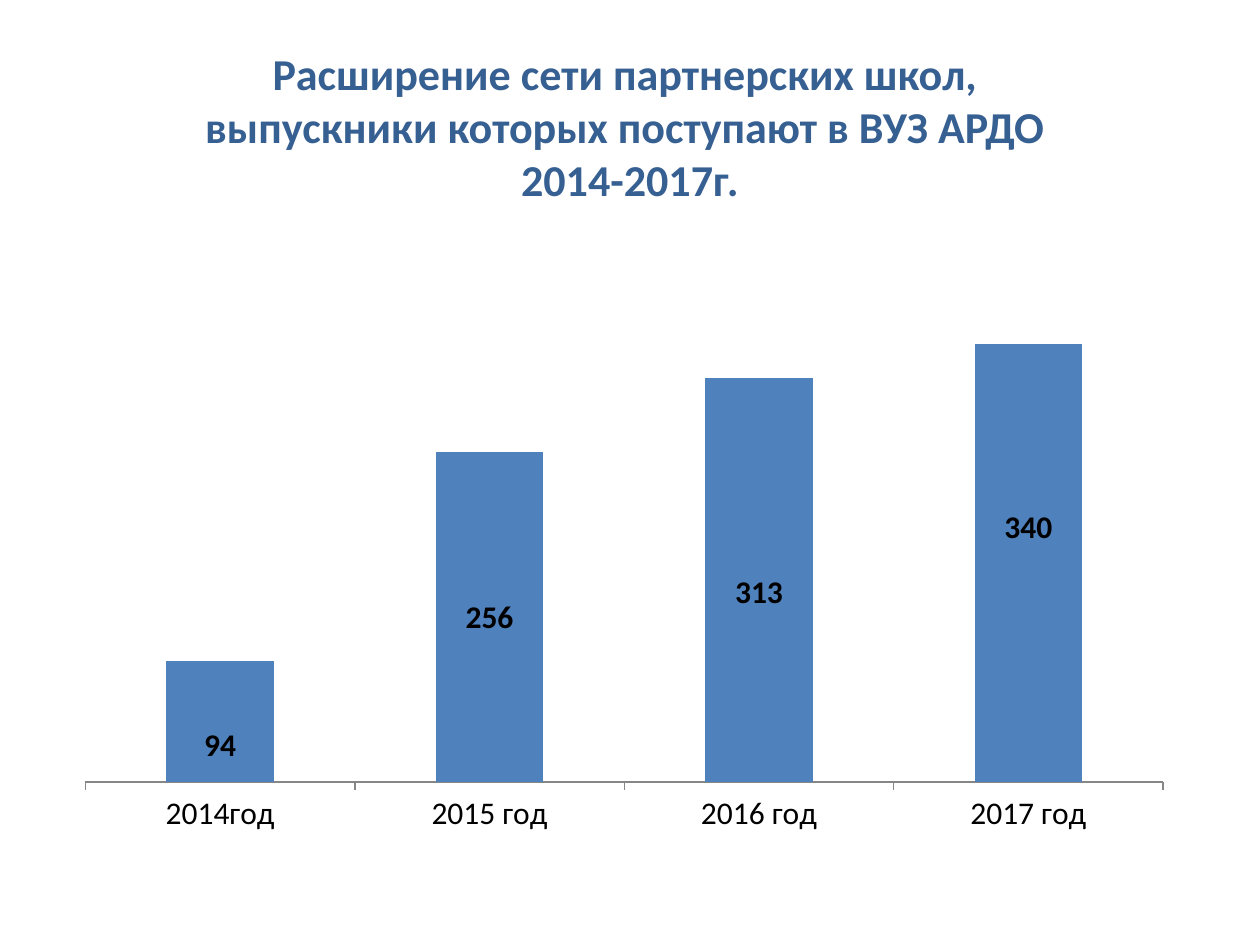
from lxml import etree
from pptx import Presentation
from pptx.chart.data import CategoryChartData
from pptx.dml.color import RGBColor
from pptx.enum.chart import XL_CHART_TYPE, XL_LABEL_POSITION, XL_TICK_MARK
from pptx.enum.text import MSO_ANCHOR, PP_ALIGN
from pptx.oxml.ns import qn
from pptx.util import Inches, Pt

COLUMNS = XL_CHART_TYPE.COLUMN_CLUSTERED
LABEL_CENTER = XL_LABEL_POSITION.CENTER
TICK_OUTSIDE, TICK_NONE = XL_TICK_MARK.OUTSIDE, XL_TICK_MARK.NONE
MIDDLE, CENTER = MSO_ANCHOR.MIDDLE, PP_ALIGN.CENTER

TITLE = ("Расширение сети партнерских школ, \v"
         "выпускники которых поступают в ВУЗ АРДО \v2014-2017г.")
SCHOOLS_BY_YEAR = {"2014год": 94, "2015 год": 256, "2016 год": 313, "2017 год": 340}
# Shift of each value label from its bar's centre, as shares of the chart's size
LABEL_SHIFTS = [(0, 0.04), (0, 0), (0, 0.02), (0, -0.06)]


def color(hex_string):
    return RGBColor.from_string(hex_string)


def format_font(font, size, hex_color="000000", bold=False, name="Calibri"):
    font.name, font.size, font.bold = name, Pt(size), bold
    font.color.rgb = color(hex_color)


def write_text(frame, text, align=CENTER, **font_format):
    paragraph = frame.paragraphs[0]
    paragraph.text = text
    paragraph.alignment = align
    for run in paragraph.runs:
        format_font(run.font, **font_format)


def manual_layout(**settings):
    """Return a c:layout element holding the given settings in schema order."""
    layout = etree.Element(qn("c:layout"))
    manual = etree.SubElement(layout, qn("c:manualLayout"))
    for tag, value in settings.items():
        etree.SubElement(manual, qn(f"c:{tag}")).set("val", str(value))
    return layout


class SlideBuilder:
    """Holds the style and the slide; boxes are in grid columns and rows."""
    grid_columns, grid_rows = 100, 75
    title_color = "376092"
    bar_color = "4F81BD"
    axis_color = "868686"

    def __init__(self, presentation):
        self.column = presentation.slide_width / self.grid_columns
        self.row = presentation.slide_height / self.grid_rows
        self.slide = presentation.slides.add_slide(presentation.slide_layouts[6])

    def box(self, left, top, width, height):
        return (round(left * self.column), round(top * self.row),
                round(width * self.column), round(height * self.row))

    def title(self, text, *cells):
        frame = self.slide.shapes.add_textbox(*self.box(*cells)).text_frame
        frame.word_wrap = True
        frame.vertical_anchor = MIDDLE
        write_text(frame, text, size=25.2, hex_color=self.title_color, bold=True)

    def column_chart(self, values, label_shifts, *cells):
        data = CategoryChartData()
        data.categories = list(values)
        data.add_series("Series 1", list(values.values()))
        chart = self.slide.shapes.add_chart(COLUMNS, *self.box(*cells), data).chart
        chart.has_legend = chart.has_title = False
        format_font(chart.font, 10)
        self.style_axes(chart)
        self.place_plot(chart)
        plot = chart.plots[0]
        plot.gap_width = 150
        plot.vary_by_categories = False
        series = plot.series[0]
        series.format.fill.solid()
        series.format.fill.fore_color.rgb = color(self.bar_color)
        self.label_bars(chart, series, label_shifts)

    def style_axes(self, chart):
        years, counts = chart.category_axis, chart.value_axis
        years.major_tick_mark, years.minor_tick_mark = TICK_OUTSIDE, TICK_NONE
        years.format.line.color.rgb = color(self.axis_color)
        years.format.line.width = Pt(0.75)
        format_font(years.tick_labels.font, 18)
        counts.minimum_scale, counts.maximum_scale = 0, 400
        counts.has_major_gridlines = False
        counts.visible = False

    def place_plot(self, chart):
        area = chart.element.xpath("c:chart/c:plotArea")[0]
        for layout in area.findall(qn("c:layout")):
            area.remove(layout)
        area.insert(0, manual_layout(layoutTarget="inner", xMode="edge", yMode="edge",
                                     x=0.02, y=0.02, w=0.96, h=0.875))

    def label_bars(self, chart, series, shifts):
        for index in range(len(shifts)):
            label = series.points[index].data_label
            format_font(label.font, 18, bold=True)
            label.position = LABEL_CENTER
        for element, (x, y) in zip(chart.element.xpath(".//c:dLbl"), shifts):
            element.find(qn("c:idx")).addnext(manual_layout(x=x, y=y))
        for leader_lines in chart.element.xpath(".//c:showLeaderLines"):
            leader_lines.set("val", "0")


def main():
    presentation = Presentation()
    presentation.slide_width, presentation.slide_height = Inches(10), Inches(7.5)
    builder = SlideBuilder(presentation)
    builder.title(TITLE, 5, 3, 90, 14)
    builder.column_chart(SCHOOLS_BY_YEAR, LABEL_SHIFTS, 5, 20.2, 89.1, 46.8)
    presentation.save("out.pptx")


if __name__ == "__main__":
    main()
